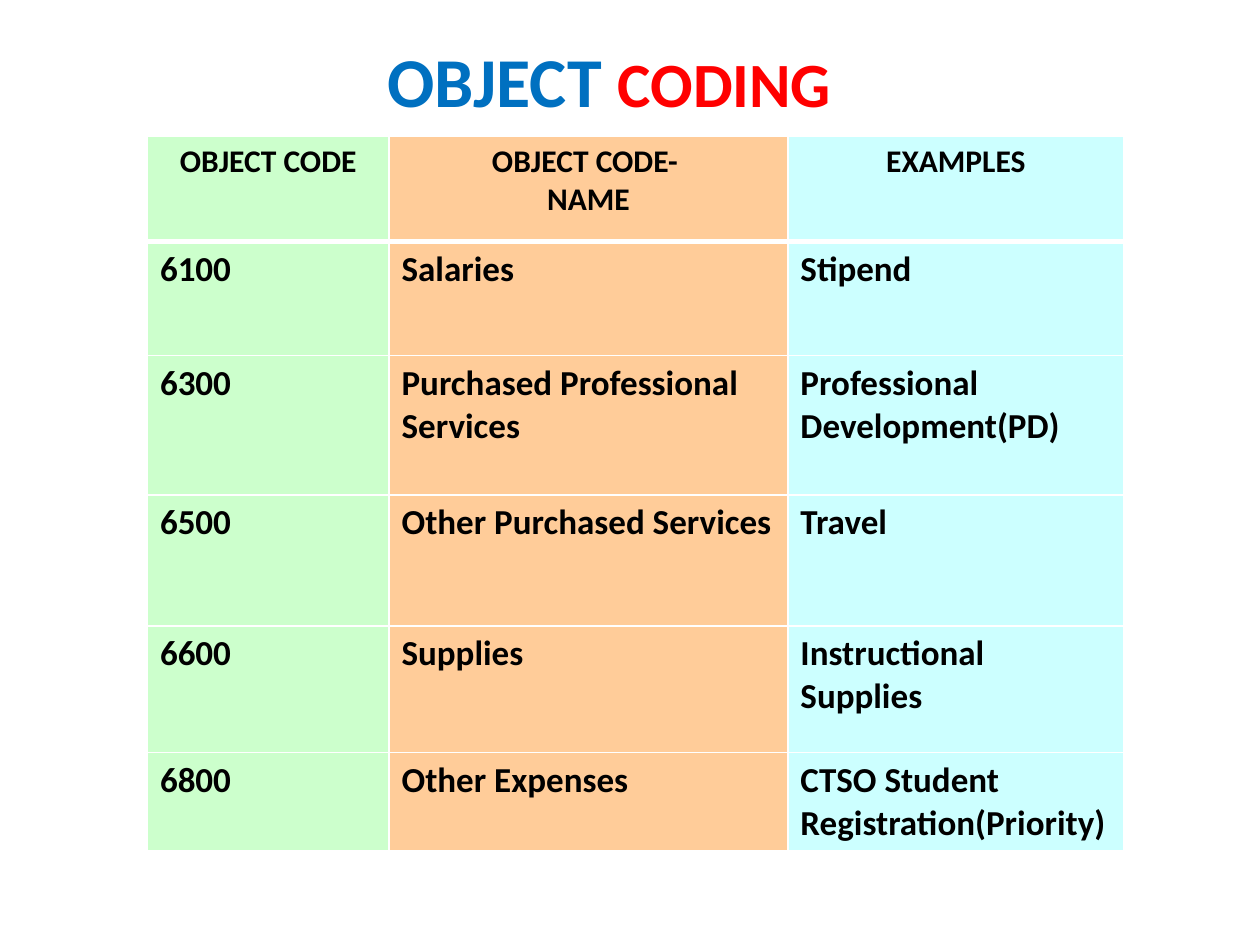
from dataclasses import dataclass

from lxml import etree
from pptx import Presentation
from pptx.dml.color import RGBColor
from pptx.enum import text as t
from pptx.oxml import ns
from pptx.util import Inches, Pt


@dataclass(frozen=True)
class Theme:
    font: str = "Calibri"
    ink: str = "000000"
    blue: str = "0070C0"
    red: str = "FF0000"
    rule: str = "FFFFFF"
    fills: tuple = ("CCFFCC", "FFCC99", "CCFFFF")
    title: int = 40
    title_end: int = 36
    head: int = 18
    body: int = 20


THEME = Theme()
COLS = (1.92, 3.17, 2.67)
ROWS = (0.83, 0.9, 1.1, 1.03, 1, 0.74)
DATA = (
    ("OBJECT CODE", "OBJECT CODE- \nNAME", "EXAMPLES"),
    ("6100", "Salaries", "Stipend"),
    ("6300", "Purchased Professional Services", "Professional Development(PD)"),
    ("6500", "Other Purchased Services", "Travel"),
    ("6600", "Supplies", "Instructional Supplies"),
    ("6800", "Other Expenses", "CTSO Student Registration(Priority)"),
)


def add_text(para, words, size, color=THEME.ink, align=t.PP_ALIGN.LEFT):
    """Add one bold run to a paragraph."""
    para.alignment = align
    run = para.add_run()
    run.text = words
    font = run.font
    font.name, font.size, font.bold = THEME.font, Pt(size), True
    font.color.rgb = RGBColor.from_string(color)


def set_rules(cell, base):
    """Rule all four sides of a cell; base is the bottom width in points."""
    props = cell._tc.get_or_add_tcPr()
    for spot, (side, width) in enumerate(zip("LRTB", (1, 1, 1, base))):
        line = etree.Element(ns.qn(f"a:ln{side}"), w=str(Pt(width)))
        fill = etree.SubElement(line, ns.qn("a:solidFill"))
        etree.SubElement(fill, ns.qn("a:srgbClr"), val=THEME.rule)
        props.insert(spot, line)


def add_title(slide, left, top, width, height):
    title = slide.shapes.title
    title.left, title.top = Inches(left), Inches(top)
    title.width, title.height = Inches(width), Inches(height)
    frame = title.text_frame
    frame.word_wrap = True
    frame.auto_size = t.MSO_AUTO_SIZE.NONE
    frame.vertical_anchor = t.MSO_ANCHOR.TOP
    para = frame.paragraphs[0]
    mid = t.PP_ALIGN.CENTER
    add_text(para, "OBJECT ", THEME.title, color=THEME.blue, align=mid)
    add_text(para, "CODING", THEME.title_end, color=THEME.red, align=mid)


def add_codes(slide, left, top, width, height):
    box = [Inches(n) for n in (left, top, width, height)]
    table = slide.shapes.add_table(len(ROWS), len(COLS), *box).table
    # Shares of the box
    for col, part in zip(table.columns, COLS):
        col.width = Inches(width * part / sum(COLS))
    for row, part in zip(table.rows, ROWS):
        row.height = Inches(height * part / sum(ROWS))
    # Cells: one fill per column, centred heading row
    for r, row in enumerate(DATA):
        head = r == 0
        size = THEME.head if head else THEME.body
        align = t.PP_ALIGN.CENTER if head else t.PP_ALIGN.LEFT
        for c, words in enumerate(row):
            cell = table.cell(r, c)
            cell.fill.solid()
            cell.fill.fore_color.rgb = RGBColor.from_string(THEME.fills[c])
            set_rules(cell, 3 if head else 1)
            frame = cell.text_frame
            for n, line in enumerate(words.split("\n")):
                para = frame.add_paragraph() if n else frame.paragraphs[0]
                add_text(para, line, size, align=align)


def main():
    deck = Presentation()
    deck.slide_width, deck.slide_height = Inches(10), Inches(7.5)
    slide = deck.slides.add_slide(deck.slide_layouts[5])
    add_title(slide, 0.42, 0.25, 8.83, 0.67)
    add_codes(slide, 1.17, 1.08, 7.75, 5.64)
    deck.save("out.pptx")


if __name__ == "__main__":
    main()
